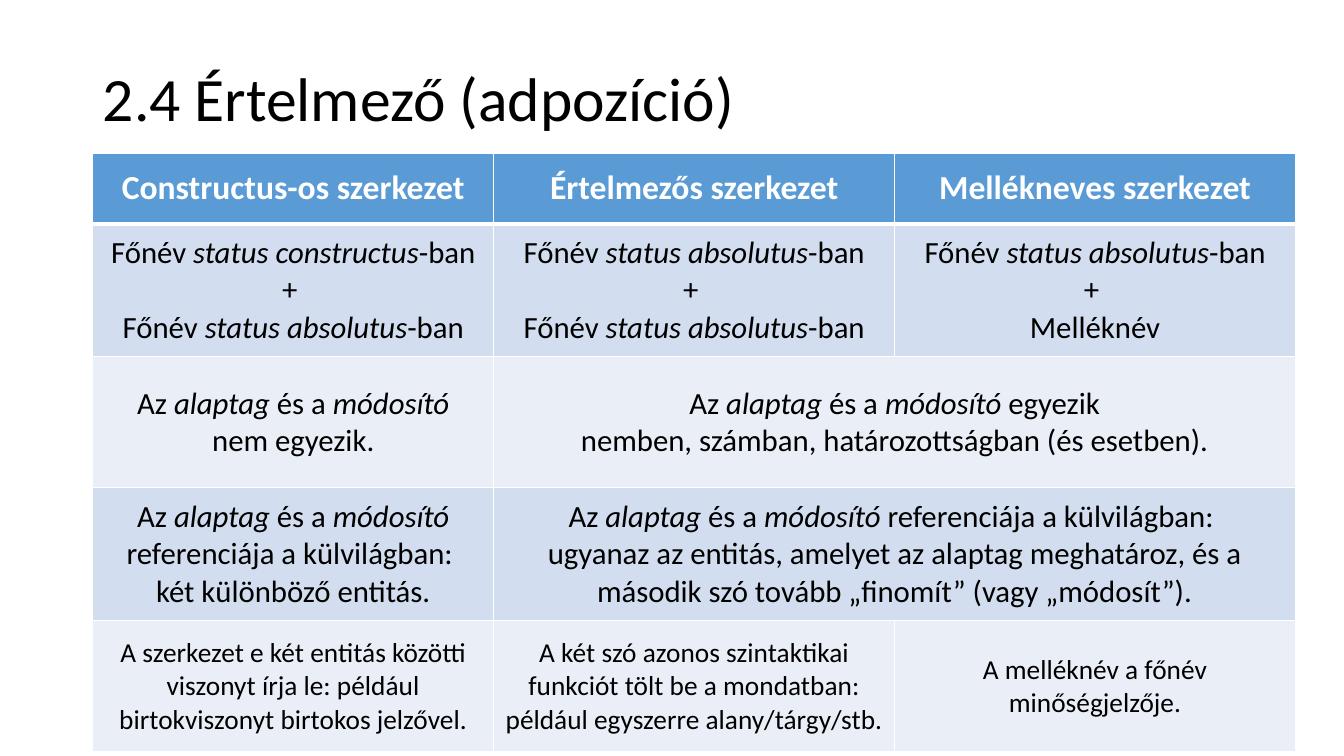
"""Build a slide comparing three Hebrew noun constructions in a table."""
from dataclasses import dataclass

from lxml import etree
from pptx import Presentation
from pptx import util as u
from pptx.dml import color
from pptx.enum import text
from pptx.oxml import ns


@dataclass(frozen=True)
class Theme:
    """Colours, font and type sizes of the slide."""
    font: str = "Calibri"
    ink: str = "000000"
    paper: str = "FFFFFF"
    header: str = "5B9BD5"
    bands: tuple = ("D2DEEF", "EAEFF7")
    title_size: float = 44
    header_size: float = 24
    body_size: float = 22
    small_size: float = 19.5
    thin: float = 1
    thick: float = 3


THEME = Theme()
TITLE = "2.4 Értelmező (adpozíció)"
TITLE_BOX = (0.92, 0.16, 11.5, 1.69)
TABLE_BOX = (0.92, 1.52, 11.93, 5.92)
ROW_HEIGHTS = (0.7, 1.32, 1.3, 1.32, 1.3)
PAIR = "Az *alaptag* és a *módosító*"
ABSOLUTE = "Főnév *status absolutus*-ban"
ROWS = (
    ("Constructus-os szerkezet", "Értelmezős szerkezet", "Mellékneves szerkezet"),
    (f"Főnév *status constructus*-ban + \n{ABSOLUTE}",
     f"{ABSOLUTE}\n+ \n{ABSOLUTE}",
     f"{ABSOLUTE}\n+ \nMelléknév"),
    (f"{PAIR}\nnem egyezik.",
     f"{PAIR} egyezik\nnemben, számban, határozottságban (és esetben)."),
    (f"{PAIR} referenciája a külvilágban: \nkét különböző entitás.",
     f"{PAIR} referenciája a külvilágban: \nugyanaz az entitás, amelyet az "
     "alaptag meghatároz, és a második szó tovább „finomít” (vagy „módosít”)."),
    ("A szerkezet e két entitás közötti viszonyt írja le: például "
     "birtokviszonyt birtokos jelzővel.",
     "A két szó azonos szintaktikai funkciót tölt be a mondatban: például "
     "egyszerre alany/tárgy/stb.",
     "A melléknév a főnév minőségjelzője."),
)


def apply(target, values):
    """Set each named attribute on the target."""
    for name, value in values.items():
        setattr(target, name, value)


def write(para, marked, size, ink, bold=False):
    """Write text whose italic stretches stand between asterisks."""
    for index, stretch in enumerate(marked.split("*")):
        for number, line in enumerate(stretch.split("\n")):
            if number:
                para.add_line_break()
            if line:
                span = para.add_run()
                span.text = line
                apply(span.font, {"name": THEME.font, "size": u.Pt(size),
                                  "bold": bold, "italic": index % 2 == 1})
                span.font.color.rgb = color.RGBColor.from_string(ink)


def add_borders(cell, widths):
    """Draw the cell's left, right, top and bottom borders."""
    properties = cell._tc.get_or_add_tcPr()
    for side, width in zip("LRTB", widths):
        line = etree.SubElement(properties, ns.qn(f"a:ln{side}"), w=str(u.Pt(width)))
        solid = etree.SubElement(line, ns.qn("a:solidFill"))
        etree.SubElement(solid, ns.qn("a:srgbClr"), val=THEME.paper)


def paint_cell(cell, row):
    """Give a cell its borders and its row's fill."""
    top = THEME.thick if row == 1 else THEME.thin
    bottom = THEME.thick if row == 0 else THEME.thin
    add_borders(cell, (THEME.thin, THEME.thin, top, bottom))
    cell.fill.solid()
    fill = THEME.bands[(row - 1) % 2] if row else THEME.header
    cell.fill.fore_color.rgb = color.RGBColor.from_string(fill)


def add_title(page, box):
    """Place and format the title."""
    title = page.shapes.title
    apply(title, dict(zip(("left", "top", "width", "height"), map(u.Inches, box))))
    apply(title.text_frame, {"word_wrap": True,
                             "vertical_anchor": text.MSO_ANCHOR.MIDDLE})
    para = title.text_frame.paragraphs[0]
    apply(para, {"alignment": text.PP_ALIGN.LEFT, "line_spacing": 0.9})
    write(para, TITLE, THEME.title_size, THEME.ink)


def add_comparison(page, box):
    """Place the comparison table; a short row merges its last two cells."""
    columns = len(ROWS[0])
    table = page.shapes.add_table(len(ROWS), columns, *map(u.Inches, box)).table
    for column in table.columns:
        column.width = u.Inches(box[2] / columns)
    for row, entries in enumerate(ROWS):
        table.rows[row].height = u.Inches(ROW_HEIGHTS[row])
        for column in range(columns):
            paint_cell(table.cell(row, column), row)
        if len(entries) < columns:
            table.cell(row, len(entries) - 1).merge(table.cell(row, columns - 1))
        size = {0: THEME.header_size, len(ROWS) - 1: THEME.small_size}.get(
            row, THEME.body_size)
        for column, entry in enumerate(entries):
            cell = table.cell(row, column)
            cell.vertical_anchor = text.MSO_ANCHOR.MIDDLE
            para = cell.text_frame.paragraphs[0]
            para.alignment = text.PP_ALIGN.CENTER
            write(para, entry, size, THEME.ink if row else THEME.paper, row == 0)


def main():
    """Build and save the deck."""
    deck = Presentation()
    apply(deck, {"slide_width": u.Inches(13.33), "slide_height": u.Inches(7.5)})
    page = deck.slides.add_slide(deck.slide_layouts[5])
    add_title(page, TITLE_BOX)
    add_comparison(page, TABLE_BOX)
    deck.save("out.pptx")


if __name__ == "__main__":
    main()
